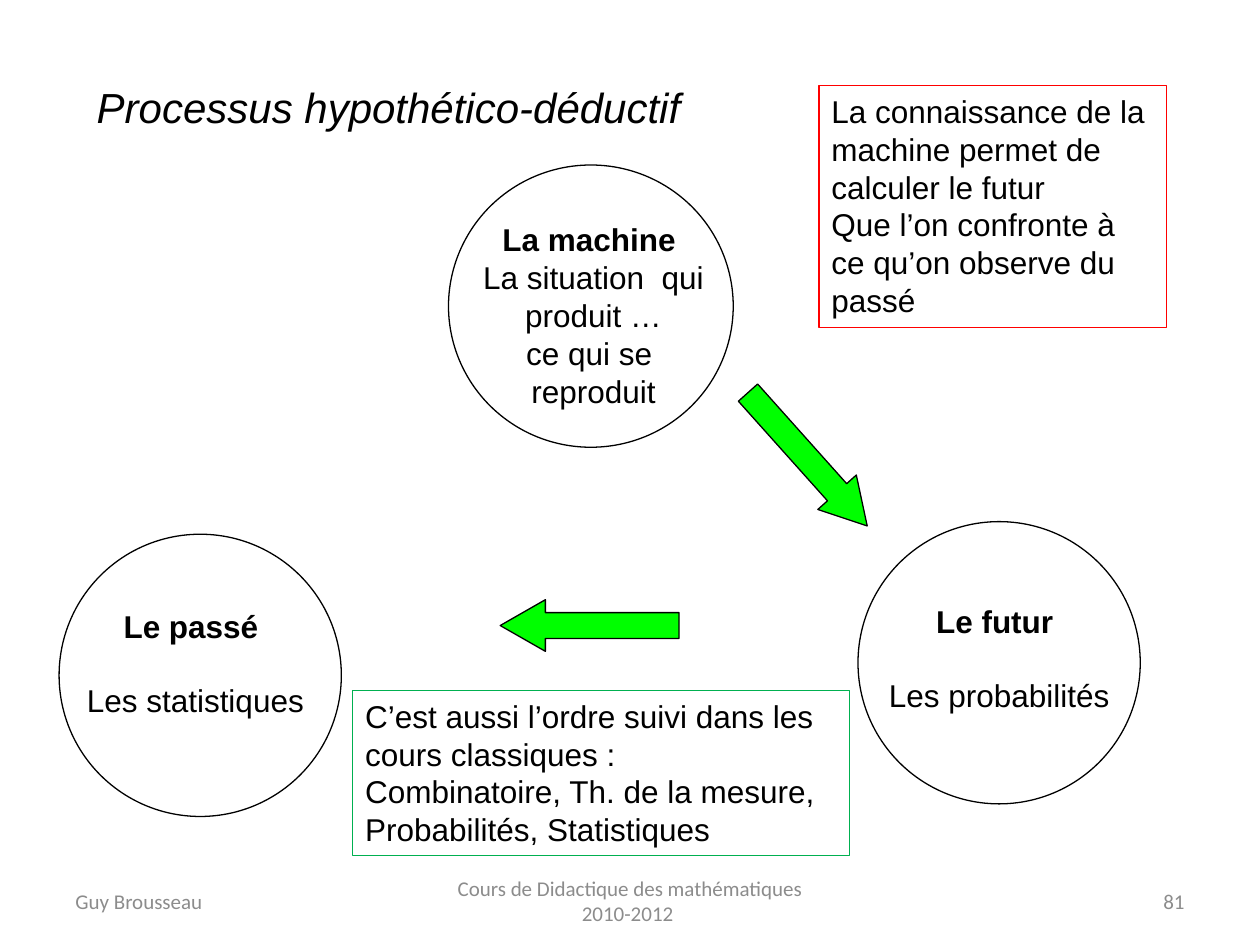
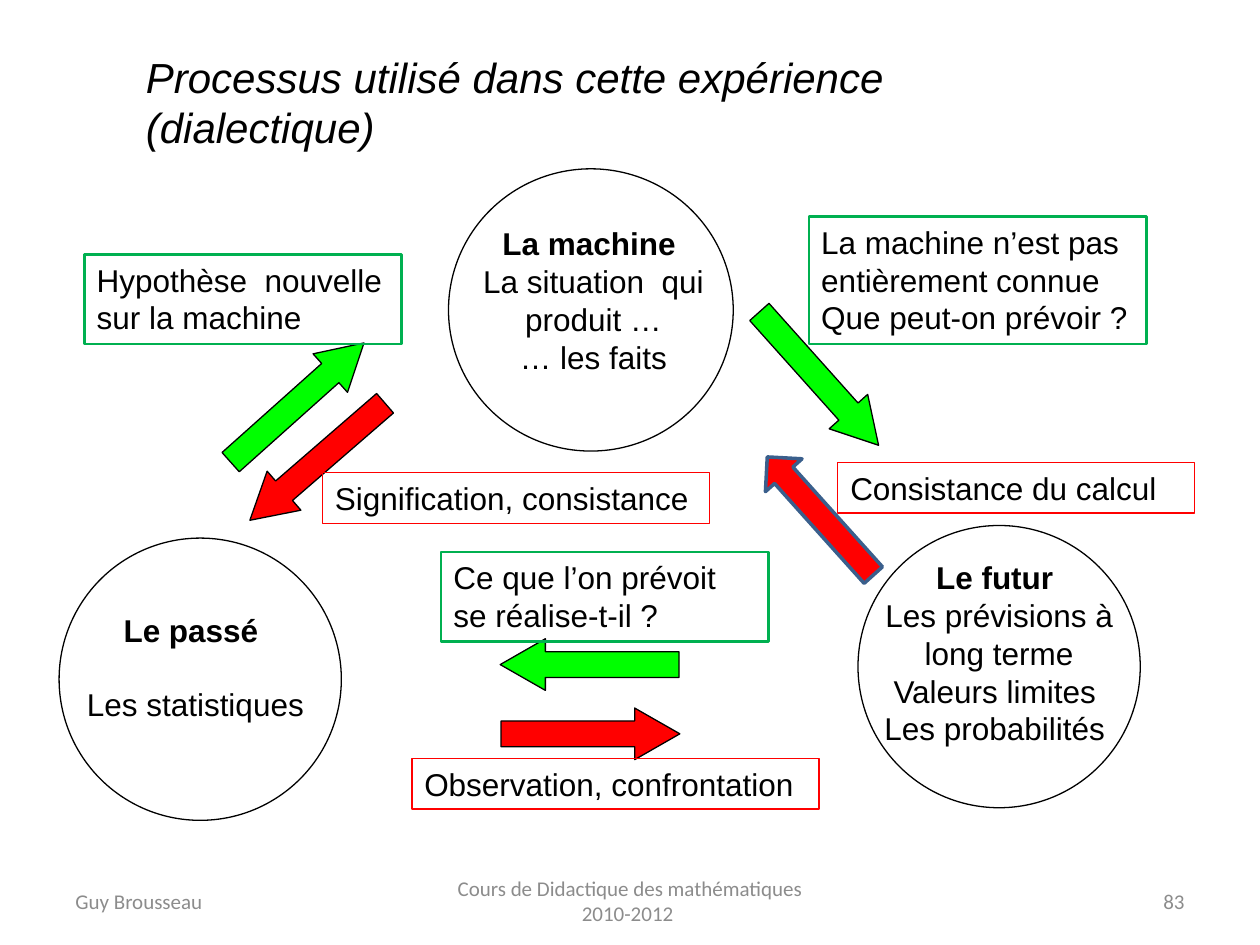
from dataclasses import dataclass

from pptx import Presentation
from pptx.dml.color import RGBColor
from pptx.enum.shapes import MSO_SHAPE as Preset
from pptx.enum.text import MSO_ANCHOR as Anchor, PP_ALIGN as Align
from pptx.shapes.autoshape import Shape
from pptx.slide import Slide
from pptx.util import Pt

BLACK, WHITE, GREY = "000000", "FFFFFF", "8C8C8C"
LIME, GREEN, RED, STEEL = "00FF00", "00B050", "FF0000", "3A5F8C"
BODY_FONT, FOOTER_FONT = "Arial", "Calibri"
BODY_SIZE, TITLE_SIZE, FOOTER_SIZE = 18, 24, 12
BLANK_LINE = 20.7
CIRCLE_HEIGHT = 161.3


@dataclass(frozen=True)
class Frame:
    left: float
    top: float
    width: float
    height: float

    def lowered(self, distance: float) -> "Frame":
        return Frame(self.left, self.top + distance, self.width, self.height)

    def lengths(self) -> tuple[Pt, Pt, Pt, Pt]:
        return Pt(self.left), Pt(self.top), Pt(self.width), Pt(self.height)


@dataclass(frozen=True)
class Stage:
    """A circle around a bold heading and its lines."""
    circle: Frame
    label: Frame
    lines: tuple[str, ...]
    gap: float = 0


@dataclass(frozen=True)
class Arrow:
    frame: Frame
    angle: float = 0
    fill: str = LIME
    line: str = BLACK
    line_width: float = 0.75
    head: float = 0.875


@dataclass(frozen=True)
class Note:
    frame: Frame
    color: str
    lines: tuple[str, ...]
    line_width: float = 0.75


@dataclass(frozen=True)
class Page:
    number: str
    title: str
    title_frame: Frame
    drop: float
    stages: tuple[Stage, ...]
    arrows: tuple[Arrow, ...]
    notes: tuple[Note, ...]


def rgb(color: str) -> RGBColor:
    return RGBColor.from_string(color)


def outline(shape: Shape, color: str, width: float) -> None:
    shape.line.color.rgb = rgb(color)
    shape.line.width = Pt(width)


def add_text(slide: Slide, frame: Frame, lines: tuple[str, ...], *,
             size: float = BODY_SIZE, font: str = BODY_FONT, color: str = BLACK,
             align: Align = Align.LEFT, anchor: Anchor = Anchor.TOP,
             italic: bool = False) -> Shape:
    box = slide.shapes.add_textbox(*frame.lengths())
    text = box.text_frame
    text.word_wrap = True
    text.vertical_anchor = anchor
    for index, line in enumerate(lines):
        para = text.paragraphs[0] if index == 0 else text.add_paragraph()
        para.text = line
        para.alignment = align
        para.font.name = font
        para.font.size = Pt(size)
        para.font.italic = italic
        para.font.color.rgb = rgb(color)
    return box


def add_stage(slide: Slide, stage: Stage, drop: float) -> None:
    label = add_text(slide, stage.label.lowered(drop), stage.lines, align=Align.CENTER)
    label.fill.solid()
    label.fill.fore_color.rgb = rgb(WHITE)
    heading, following = label.text_frame.paragraphs[:2]
    heading.font.bold = True
    following.space_before = Pt(stage.gap)
    circle = slide.shapes.add_shape(Preset.OVAL, *stage.circle.lowered(drop).lengths())
    circle.shadow.inherit = False
    circle.fill.background()
    outline(circle, BLACK, 0.75)


def add_arrow(slide: Slide, arrow: Arrow) -> None:
    shape = slide.shapes.add_shape(Preset.RIGHT_ARROW, *arrow.frame.lengths())
    shape.shadow.inherit = False
    shape.rotation = arrow.angle
    shape.adjustments[1] = arrow.head
    shape.fill.solid()
    shape.fill.fore_color.rgb = rgb(arrow.fill)
    outline(shape, arrow.line, arrow.line_width)


def add_note(slide: Slide, note: Note) -> None:
    box = add_text(slide, note.frame, note.lines)
    outline(box, note.color, note.line_width)


def add_footer(slide: Slide, number: str) -> None:
    footers = (
        (36, 168, "Guy Brousseau", Align.LEFT),
        (246, 228, "Cours de Didactique des mathématiques 2010-2012 ", Align.CENTER),
        (516, 168, number, Align.RIGHT),
    )
    for left, width, text, align in footers:
        add_text(slide, Frame(left, 500.5, width, 28.75), (text,), size=FOOTER_SIZE,
                 font=FOOTER_FONT, color=GREY, align=align, anchor=Anchor.MIDDLE)


def add_page(deck: Presentation, page: Page) -> None:
    slide = deck.slides.add_slide(deck.slide_layouts[6])
    for stage in page.stages:
        add_stage(slide, stage, page.drop)
    for arrow in page.arrows:
        add_arrow(slide, arrow)
    add_text(slide, page.title_frame, (page.title,), size=TITLE_SIZE, italic=True)
    for note in page.notes:
        add_note(slide, note)
    add_footer(slide, page.number)


def arrow_frame(left: float, top: float) -> Frame:
    return Frame(left, top, 102.2, 29.5)


def machine(*facts: str) -> Stage:
    return Stage(Frame(256.3, 94.3, 162.7, CIRCLE_HEIGHT), Frame(257.8, 122.4, 162.7, 117.4),
                 ("La machine ", "La situation  qui produit …", *facts))


def future(label_top: float, label_height: float, *lines: str, gap: float = 0) -> Stage:
    return Stage(Frame(490.3, 298.1, 161.3, CIRCLE_HEIGHT),
                 Frame(490.3, label_top, 161.3, label_height), ("Le futur ", *lines), gap)


PAST = Stage(Frame(33.8, 305.3, 161.3, CIRCLE_HEIGHT), Frame(31, 343.4, 161.3, 87.8),
             ("Le passé ", "Les statistiques"), BLANK_LINE)

PAGES = (
    Page(
        "81", "Processus hypothético-déductif", Frame(48.2, 43.2, 578.2, 36), 0,
        (PAST, machine("ce qui se ", "reproduit"),
         future(340.6, 87.8, "Les probabilités", gap=BLANK_LINE)),
        (Arrow(arrow_frame(410.4, 247.7), 48.2), Arrow(arrow_frame(285.8, 342.7), 180)),
        (
            Note(Frame(201.6, 394.6, 283.7, 94.3), GREEN,
                 ("C’est aussi l’ordre suivi dans les cours classiques :",
                  "Combinatoire, Th. de la mesure, Probabilités, Statistiques")),
            Note(Frame(468, 49, 198.7, 138.2), RED,
                 ("La connaissance de la machine permet de calculer le futur",
                  "Que l’on confronte à ce qu’on observe du passé")),
        ),
    ),
    Page(
        "83", "Processus utilisé dans cette expérience (dialectique)",
        Frame(76.3, 25.9, 544.3, 65.5), 2.2,
        (PAST, machine("… les faits"),
         future(313.2, 124.6, "Les prévisions à long terme", "Valeurs limites ",
                "Les probabilités ")),
        (
            Arrow(arrow_frame(118.8, 215.3), 318.2),
            Arrow(arrow_frame(416.9, 201.6), 48.2),
            Arrow(arrow_frame(285.8, 365), 180),
            Arrow(Frame(423.4, 280.8, 90.7, 28.1), 228.1, RED, STEEL, 2, 0.5),
            Arrow(arrow_frame(286.3, 404.6), 0, RED),
            Arrow(arrow_frame(130.3, 249.1), 139.1, RED),
        ),
        (
            Note(Frame(462.2, 123.8, 193, 72.7), GREEN,
                 ("La machine n’est pas entièrement connue", "Que peut-on prévoir ?"), 1.5),
            Note(Frame(252, 315.4, 187.2, 51.1), GREEN,
                 ("Ce que l’on prévoit se réalise-t-il ?",), 1.5),
            Note(Frame(48.2, 145.4, 181.4, 51.1), GREEN,
                 ("Hypothèse  nouvelle sur la machine",), 1.5),
            Note(Frame(235.4, 433.4, 232.6, 29), RED, ("Observation, confrontation",)),
            Note(Frame(478.8, 264.2, 203.8, 29), RED, ("Consistance du calcul",)),
            Note(Frame(184.3, 270, 221, 29), RED, ("Signification, consistance",)),
        ),
    ),
)


def main() -> None:
    deck = Presentation()
    deck.slide_width, deck.slide_height = Pt(720), Pt(540)
    for page in PAGES:
        add_page(deck, page)
    deck.save("out.pptx")


if __name__ == "__main__":
    main()
